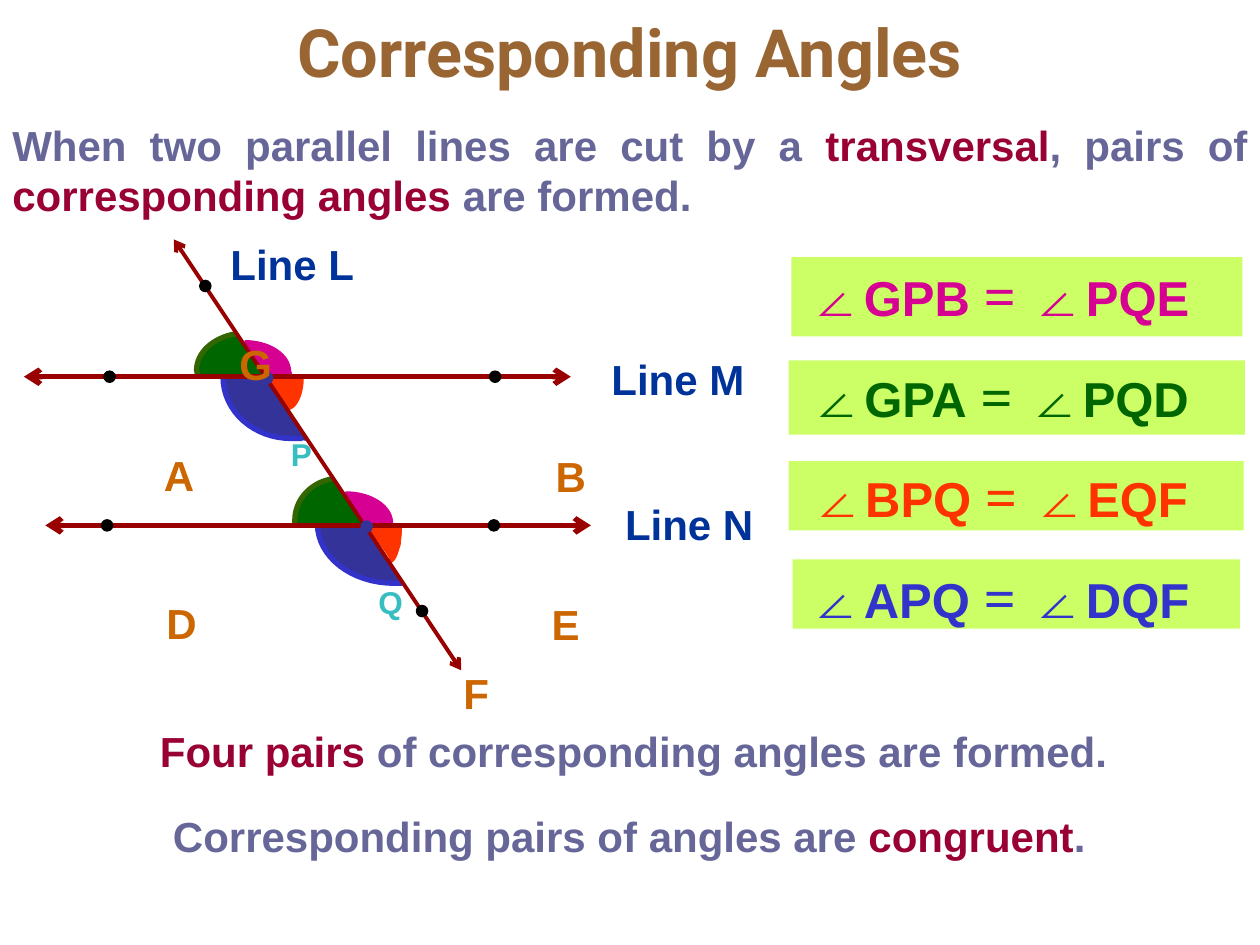
from dataclasses import dataclass

from lxml import etree
from pptx import Presentation
from pptx import util as u
from pptx.dml.color import RGBColor
from pptx.enum import shapes, text
from pptx.oxml.ns import qn

Point = tuple[float, float]
Points = tuple[Point, ...]

COLORS = {
    "title": "996633", "body": "666699", "key": "990033", "line": "990000",
    "panel": "CCFF66", "name": "003399", "point": "CC6600", "vertex": "37BEC1",
    "dot": "000000", "navy": "333399", "blue": "3333CC", "green": "006600",
    "olive": "336600", "pink": "D60093", "orange": "FF3300",
}


@dataclass(frozen=True)
class Angle:
    fill: str
    edge: str
    outline: Points
    arc: Points


@dataclass(frozen=True)
class Label:
    words: str
    center: Point
    color: str
    size: int = 24
    width: float = 0.58


@dataclass(frozen=True)
class Equation:
    left: str
    right: str
    color: str
    panel: tuple[float, float, float, float]


@dataclass(frozen=True)
class Arrow:
    start: Point
    end: Point
    weight: float = 3


def curve(a: Point, b: Point, c: Point, d: Point, steps: int = 16) -> Points:
    return tuple(
        tuple((1 - t) ** 3 * p + 3 * (1 - t) ** 2 * t * q + 3 * (1 - t) * t * t * r + t ** 3 * s
              for p, q, r, s in zip(a, b, c, d))
        for t in (i / steps for i in range(steps + 1)))


ANGLES = (
    Angle("orange", "orange",
          curve((3.11, 4.46), (2.88, 4.11), (2.83, 4.19), (3.19, 4.19)) + ((3.18, 4.33),),
          curve((3.09, 4.45), (3.13, 4.45), (3.17, 4.32), (3.17, 4.17))),
    Angle("green", "olive",
          ((2.88, 4.16), (2.34, 4.16), (2.36, 4.01), (2.44, 3.89), (2.58, 3.82), (2.67, 3.81), (2.75, 3.96)),
          curve((2.64, 3.8), (2.46, 3.83), (2.34, 3.97), (2.34, 4.13)) + ((2.34, 4.17),)),
    Angle("navy", "blue",
          ((2.1, 3), (1.77, 3), (1.83, 3.22), (2.01, 3.4), (2.2, 3.47), (2.44, 3.5), (2.14, 3)),
          ((2.4, 3.48),) + curve((2.31, 3.48), (2.02, 3.48), (1.77, 3.27), (1.77, 2.99))),
    Angle("pink", "pink",
          ((2.09, 2.95), (2.04, 2.89), (1.99, 2.81), (1.94, 2.75), (1.95, 2.73), (2.12, 2.76),
           (2.22, 2.82), (2.29, 2.89), (2.32, 2.97), (2.27, 2.99), (2.12, 2.99)),
          curve((1.94, 2.72), (2.13, 2.72), (2.29, 2.82), (2.29, 2.95)) + ((2.28, 2.98),)),
    Angle("orange", "orange",
          curve((2.3, 3.26), (2.1, 2.94), (2.06, 3.01), (2.38, 3.01)) + ((2.37, 3.14),),
          curve((2.3, 3.23), (2.35, 3.21), (2.39, 3.11), (2.39, 3))),
    Angle("pink", "pink",
          ((2.87, 4.13), (2.83, 4.07), (2.77, 3.99), (2.73, 3.93), (2.73, 3.91), (2.9, 3.94),
           (2.99, 4), (3.06, 4.07), (3.09, 4.15), (2.9, 4.17)),
          curve((2.74, 3.92), (2.95, 3.92), (3.1, 4.03), (3.1, 4.15)) + ((3.1, 4.19),)),
    Angle("navy", "blue",
          ((2.86, 4.19), (2.53, 4.19), (2.59, 4.38), (2.77, 4.54), (2.96, 4.6), (3.2, 4.63), (2.9, 4.2)),
          ((3.19, 4.63),) + curve((3.13, 4.63), (2.79, 4.63), (2.52, 4.42), (2.52, 4.16))),
    Angle("green", "olive",
          ((2.08, 2.97), (1.56, 2.97), (1.58, 2.84), (1.65, 2.73), (1.79, 2.67), (1.88, 2.66), (1.96, 2.79)),
          curve((1.87, 2.65), (1.69, 2.68), (1.56, 2.8), (1.56, 2.94)) + ((1.57, 2.98),)),
)
EQUATIONS = (
    Equation("GPB", "PQE", "pink", (6.28, 2.04, 3.58, 0.63)),
    Equation("GPA", "PQD", "green", (6.26, 2.86, 3.62, 0.59)),
    Equation("BPQ", "EQF", "orange", (6.26, 3.66, 3.61, 0.55)),
    Equation("APQ", "DQF", "blue", (6.29, 4.44, 3.55, 0.55)),
)
ARROWS = (
    Arrow((0.36, 4.17), (4.69, 4.17)),
    Arrow((0.19, 2.99), (4.53, 2.99)),
    Arrow((3.66, 5.32), (1.38, 1.9), 2.25),
)
DOTS = {
    "dot": ((3.93, 2.99), (0.87, 2.99), (0.85, 4.17), (3.92, 4.17), (1.63, 2.27), (3.35, 4.85)),
    "navy": ((2.12, 3), (2.91, 4.18)),
}
LABELS = (
    Label("Line L", (2.32, 2.09), "name", width=1.68),
    Label("Line M", (5.38, 3.01), "name", width=1.68),
    Label("Line N", (5.47, 4.16), "name", width=1.6),
    Label("A", (1.42, 3.77), "point"),
    Label("B", (4.53, 3.78), "point"),
    Label("D", (1.44, 4.94), "point"),
    Label("E", (4.49, 4.95), "point"),
    Label("F", (3.78, 5.5), "point"),
    Label("G", (2.03, 2.89), "point"),
    Label("P", (2.38, 3.6), "vertex", 18, 0.34),
    Label("Q", (3.08, 4.78), "vertex", 18, 0.35),
)


def rgb(name: str) -> RGBColor:
    return RGBColor.from_string(COLORS[name])


def add_span(para, words: str, *, color: str, size: int = 24, font: str = "Arial") -> None:
    span = para.add_run()
    span.text = words
    span.font.name, span.font.size, span.font.bold = font, u.Pt(size), True
    span.font.color.rgb = rgb(color)


def add_box(page, left: float, top: float, width: float, height: float):
    box = page.shapes.add_textbox(*map(u.Inches, (left, top, width, height)))
    box.text_frame.word_wrap = True
    return box.text_frame


def add_sentence(page, place, spans, *, align=text.PP_ALIGN.CENTER, **style) -> None:
    para = add_box(page, *place).paragraphs[0]
    para.alignment = align
    for words, color in spans:
        add_span(para, words, color=color, **style)


def add_label(page, label: Label) -> None:
    height = 0.5 if label.size == 24 else 0.4
    x, y = label.center
    place = (x - label.width / 2, y - height / 2, label.width, height)
    add_sentence(page, place, [(label.words, label.color)], size=label.size)


def add_solid(page, kind, place, color: str) -> None:
    shape = page.shapes.add_shape(kind, *map(u.Inches, place))
    shape.shadow.inherit = False
    shape.fill.solid()
    shape.fill.fore_color.rgb = rgb(color)
    shape.line.fill.background()


def add_outline(page, points: Points, *, closed: bool):
    start, *rest = [(u.Inches(x), u.Inches(y)) for x, y in points]
    builder = page.shapes.build_freeform(*start, scale=1.0)
    builder.add_line_segments(rest, close=closed)
    shape = builder.convert_to_shape()
    shape.shadow.inherit = False
    return shape


def add_wedge(page, angle: Angle) -> None:
    wedge = add_outline(page, angle.outline, closed=True)
    wedge.fill.solid()
    wedge.fill.fore_color.rgb = rgb(angle.fill)
    wedge.line.fill.background()


def add_arc(page, angle: Angle) -> None:
    arc = add_outline(page, angle.arc, closed=False)
    arc.fill.background()
    arc.line.color.rgb = rgb(angle.edge)
    arc.line.width = u.Pt(3)


def add_arrow(page, arrow: Arrow) -> None:
    ends = map(u.Inches, (*arrow.start, *arrow.end))
    line = page.shapes.add_connector(shapes.MSO_CONNECTOR.STRAIGHT, *ends)
    line.line.color.rgb = rgb("line")
    line.line.width = u.Pt(arrow.weight)
    for end in ("a:headEnd", "a:tailEnd"):
        etree.SubElement(line.line._get_or_add_ln(), qn(end), type="arrow")
    etree.SubElement(line._element.spPr, qn("a:effectLst"))


def add_equations(page) -> None:
    for equation in EQUATIONS:
        add_solid(page, shapes.MSO_SHAPE.RECTANGLE, equation.panel, "panel")
    frame = add_box(page, 6.14, 1.75, 3.57, 3.3)
    for index, equation in enumerate(EQUATIONS):
        para = frame.add_paragraph() if index else frame.paragraphs[0]
        para.alignment, para.line_spacing = text.PP_ALIGN.CENTER, 1.5
        for words, size, font in (("∠", 32, "Arial"), (equation.left, 28, "Arial"),
                                  (" = ", 32, "Times New Roman"),
                                  ("∠", 32, "Arial"), (equation.right, 28, "Arial")):
            add_span(para, words, color=equation.color, size=size, font=font)


def main() -> None:
    deck = Presentation()
    deck.slide_width, deck.slide_height = u.Inches(10), u.Inches(7.5)
    page = deck.slides.add_slide(deck.slide_layouts[6])
    add_sentence(page, (0, 0.04, 10, 0.73), [("Corresponding Angles", "title")], size=38, font="Roboto")
    add_sentence(page, (0, 0.9, 10, 0.9), [
        ("When two parallel lines are cut by a ", "body"), ("transversal", "key"), (", pairs of ", "body"),
        ("corresponding angles", "key"), (" are formed. ", "body")], align=text.PP_ALIGN.JUSTIFY)
    add_sentence(page, (0.15, 5.71, 9.85, 0.5), [
        ("Four pairs", "key"), (" of corresponding angles are formed. ", "body")])
    add_sentence(page, (0.14, 6.38, 9.8, 0.5), [
        ("Corresponding pairs of angles are ", "body"), ("congruent", "key"), (". ", "body")])
    add_equations(page)
    for draw, items in ((add_wedge, ANGLES), (add_arc, ANGLES), (add_arrow, ARROWS)):
        for item in items:
            draw(page, item)
    for color, centers in DOTS.items():
        for x, y in centers:
            add_solid(page, shapes.MSO_SHAPE.OVAL, (x - 0.05, y - 0.05, 0.1, 0.1), color)
    for label in LABELS:
        add_label(page, label)
    deck.save("out.pptx")


if __name__ == "__main__":
    main()
